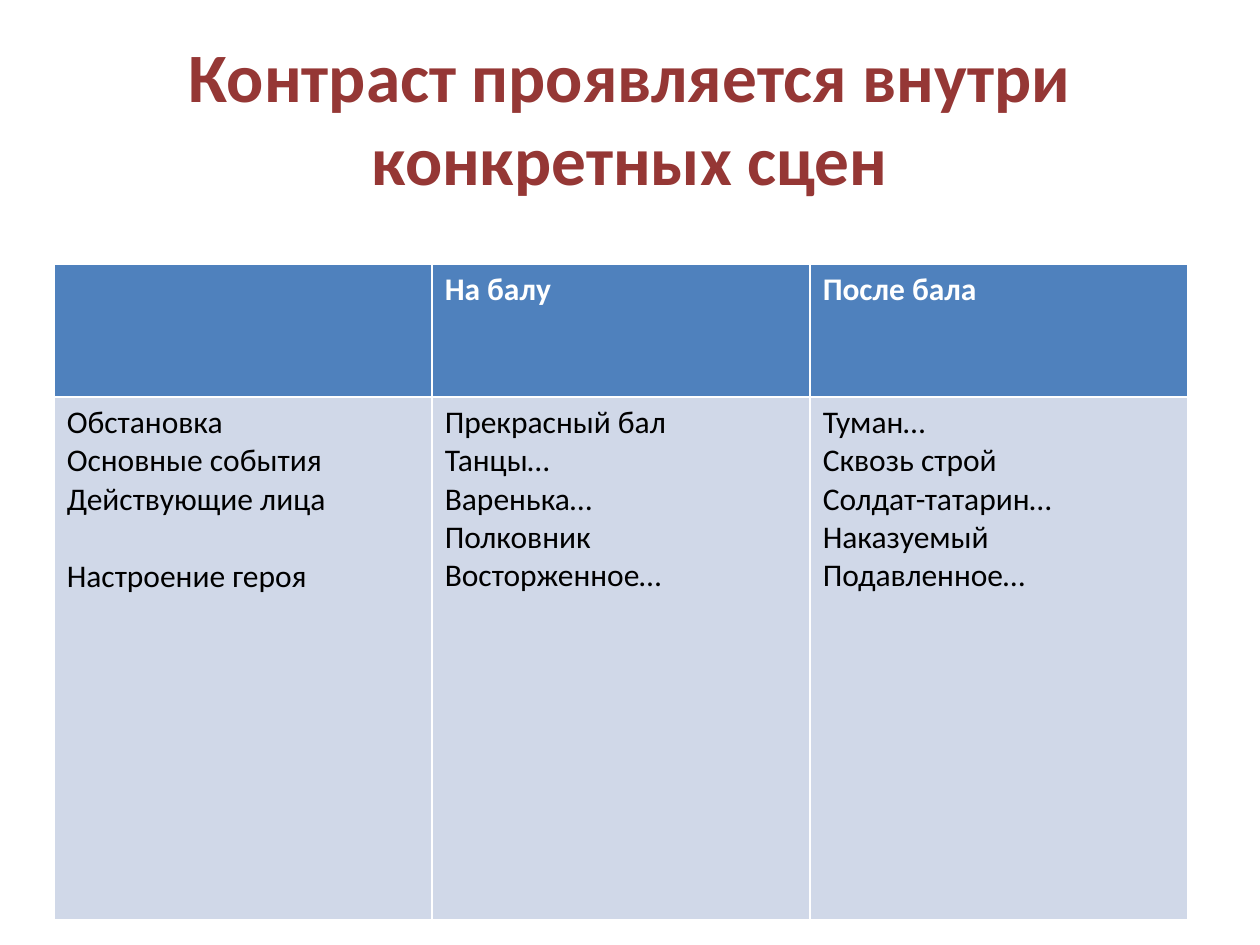
from pptx import Presentation
from pptx.dml.color import RGBColor
from pptx.enum.text import MSO_ANCHOR, PP_ALIGN
from pptx.util import Inches, Pt

TITLE = "Контраст проявляется внутри конкретных сцен"
COLUMNS = [
    ("", ["Обстановка", "Основные события", "Действующие лица", "Настроение героя"]),
    ("На балу", ["Прекрасный бал", "Танцы…", "Варенька…", "Полковник", "Восторженное…"]),
    ("После бала", ["Туман…", "Сквозь строй", "Солдат-татарин…", "Наказуемый", "Подавленное…"]),
]
ROW_HEIGHTS = [1.05, 4.15]
COL_WIDTH = 3
THEME = {
    "font": "Calibri", "title_size": 39.6, "size": 18, "line": 22,
    "title": "953735", "head_fill": "4F81BD", "head_text": "FFFFFF",
    "body_fill": "D0D8E8", "body_text": "000000",
}


def style(p, size, color, bold):
    p.font.name = THEME["font"]
    p.font.size = Pt(THEME[size])
    p.font.bold = bold
    p.font.color.rgb = RGBColor.from_string(THEME[color])


def fill_cell(cell, lines, part, bold):
    cell.fill.solid()
    cell.fill.fore_color.rgb = RGBColor.from_string(THEME[part + "_fill"])
    tf = cell.text_frame
    tf.text = "\n".join(lines)
    for p in tf.paragraphs:
        style(p, "size", part + "_text", bold)


def main():
    """Build the slide contrasting the two scenes."""
    prs = Presentation()
    prs.slide_width, prs.slide_height = Inches(10), Inches(7.5)
    s = prs.slides.add_slide(prs.slide_layouts[6])

    tf = s.shapes.add_textbox(Inches(0.5), Inches(0.3), Inches(9), Inches(1.25)).text_frame
    tf.word_wrap = True
    tf.vertical_anchor = MSO_ANCHOR.MIDDLE
    tf.text = TITLE
    p = tf.paragraphs[0]
    p.alignment = PP_ALIGN.CENTER
    style(p, "title_size", "title", True)

    table = s.shapes.add_table(
        len(ROW_HEIGHTS), len(COLUMNS), Inches(0.43), Inches(2.1),
        Inches(COL_WIDTH * len(COLUMNS)), Inches(sum(ROW_HEIGHTS))).table
    for row, height in zip(table.rows, ROW_HEIGHTS):
        row.height = Inches(height)
    most = max(len(lines) for _, lines in COLUMNS)
    for i, (head, lines) in enumerate(COLUMNS):
        table.columns[i].width = Inches(COL_WIDTH)
        fill_cell(table.cell(0, i), [head], "head", True)
        body = table.cell(1, i)
        fill_cell(body, lines, "body", False)
        gap = most - len(lines)
        if gap:
            body.text_frame.paragraphs[-1].space_before = Pt(THEME["line"] * gap)

    prs.save("out.pptx")


if __name__ == "__main__":
    main()
